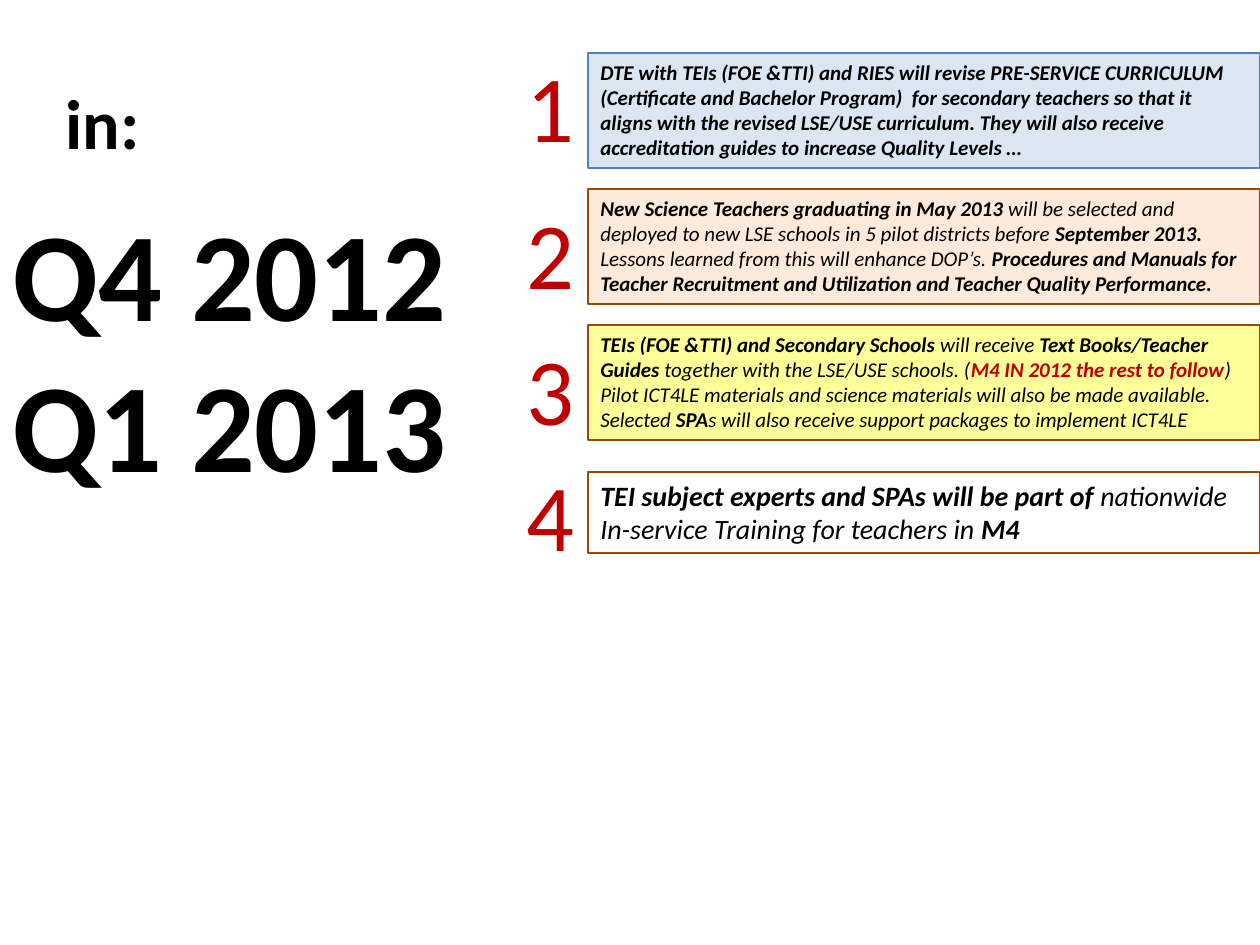
from pptx import Presentation
from pptx.dml.color import RGBColor
from pptx.enum.shapes import MSO_SHAPE
from pptx.enum.text import MSO_ANCHOR, MSO_AUTO_SIZE, PP_ALIGN
from pptx.util import Emu, Pt

PX = 914400 // 126
BLACK = RGBColor(0x00, 0x00, 0x00)
RED = RGBColor(0xC0, 0x00, 0x00)
BLUE = RGBColor(0x4F, 0x81, 0xBD)
BROWN = RGBColor(0x98, 0x48, 0x07)
PALE_BLUE = RGBColor(0xDC, 0xE6, 0xF2)
PALE_ORANGE = RGBColor(0xFD, 0xEA, 0xDA)
YELLOW = RGBColor(0xFF, 0xFF, 0x99)

# Emphasis of a span: bold flag and colour
STRONG = (True, BLACK)
PLAIN = (False, BLACK)
ALERT = (True, RED)

# Number top, panel top, panel height, fill, outline, text size, spans
STEPS = [
    (42, 53, 115, PALE_BLUE, BLUE, 12, [
        ("DTE with TEIs (FOE &TTI) and RIES will revise PRE-SERVICE CURRICULUM "
         "(Certificate and Bachelor Program)  for secondary teachers so that it "
         "aligns with the revised LSE/USE curriculum. They will also receive "
         "accreditation guides to increase Quality Levels …", STRONG),
    ]),
    (189, 189, 115, PALE_ORANGE, BROWN, 12, [
        ("New Science Teachers graduating in May 2013 ", STRONG),
        ("will be selected and deployed to new LSE schools in 5 pilot districts "
         "before ", PLAIN),
        ("September 2013. ", STRONG),
        ("Lessons learned from this will enhance DOP’s.", PLAIN),
        (" Procedures and Manuals for Teacher Recruitment and Utilization and "
         "Teacher Quality Performance.", STRONG),
    ]),
    (325, 325, 115, YELLOW, BROWN, 12, [
        ("TEIs (FOE &TTI) and Secondary Schools ", STRONG),
        ("will receive ", PLAIN),
        ("Text Books/Teacher Guides", STRONG),
        (" together with the LSE/USE schools. (", PLAIN),
        ("M4 IN 2012 the rest to follow", ALERT),
        (") Pilot ICT4LE materials and science materials will also be made "
         "available. Selected ", PLAIN),
        ("SPA", STRONG),
        ("s will also receive support packages to implement ICT4LE", PLAIN),
    ]),
    (451, 472, 81, None, BROWN, 16, [
        ("TEI subject experts and SPAs will be part of ", STRONG),
        ("nationwide In-service Training for teachers in ", PLAIN),
        ("M4", STRONG),
    ]),
]


class SlideBuilder:
    """Holds the text style and the page being filled; lengths are in px."""

    def __init__(self, page, font_name="Calibri"):
        self.page = page
        self.font_name = font_name

    def format_span(self, span, size, emphasis, italic=False):
        span.font.name = self.font_name
        span.font.size = Pt(size)
        span.font.bold, span.font.color.rgb = emphasis
        span.font.italic = italic

    def panel(self, left, top, width, height, fill, outline, size, spans):
        box = self.page.shapes.add_shape(
            MSO_SHAPE.RECTANGLE, *(Emu(n * PX) for n in (left, top, width, height)))
        box.shadow.inherit = False
        if fill is None:
            box.fill.background()
        else:
            box.fill.solid()
            box.fill.fore_color.rgb = fill
        box.line.color.rgb = outline
        box.line.width = Pt(0.75)
        frame = box.text_frame
        frame.word_wrap = True
        frame.auto_size = MSO_AUTO_SIZE.SHAPE_TO_FIT_TEXT
        frame.vertical_anchor = MSO_ANCHOR.TOP
        para = frame.paragraphs[0]
        para.alignment = PP_ALIGN.LEFT
        for text, emphasis in spans:
            span = para.add_run()
            span.text = text
            self.format_span(span, size, emphasis, italic=True)

    def label(self, left, top, width, height, text, size, emphasis,
              align=PP_ALIGN.LEFT, wrap=True):
        box = self.page.shapes.add_textbox(
            *(Emu(n * PX) for n in (left, top, width, height)))
        frame = box.text_frame
        frame.word_wrap = wrap
        frame.auto_size = MSO_AUTO_SIZE.SHAPE_TO_FIT_TEXT
        frame.text = text
        for para in frame.paragraphs:
            para.alignment = align
            for span in para.runs:
                self.format_span(span, size, emphasis)


def main():
    deck = Presentation()
    deck.slide_width, deck.slide_height = Emu(1260 * PX), Emu(945 * PX)
    builder = SlideBuilder(deck.slides.add_slide(deck.slide_layouts[6]))

    builder.label(53, 73, 462, 97, "in:", 40, STRONG)
    builder.label(0, 189, 494, 318, "Q4 2012\nQ1 2013", 72, STRONG)
    for number, step in enumerate(STEPS, start=1):
        number_top, top, height, fill, outline, size, spans = step
        builder.panel(588, top, 672, height, fill, outline, size, spans)
        builder.label(514, number_top, 74, 127, str(number), 54, (False, RED),
                      align=PP_ALIGN.CENTER, wrap=False)

    deck.save("out.pptx")


if __name__ == "__main__":
    main()
